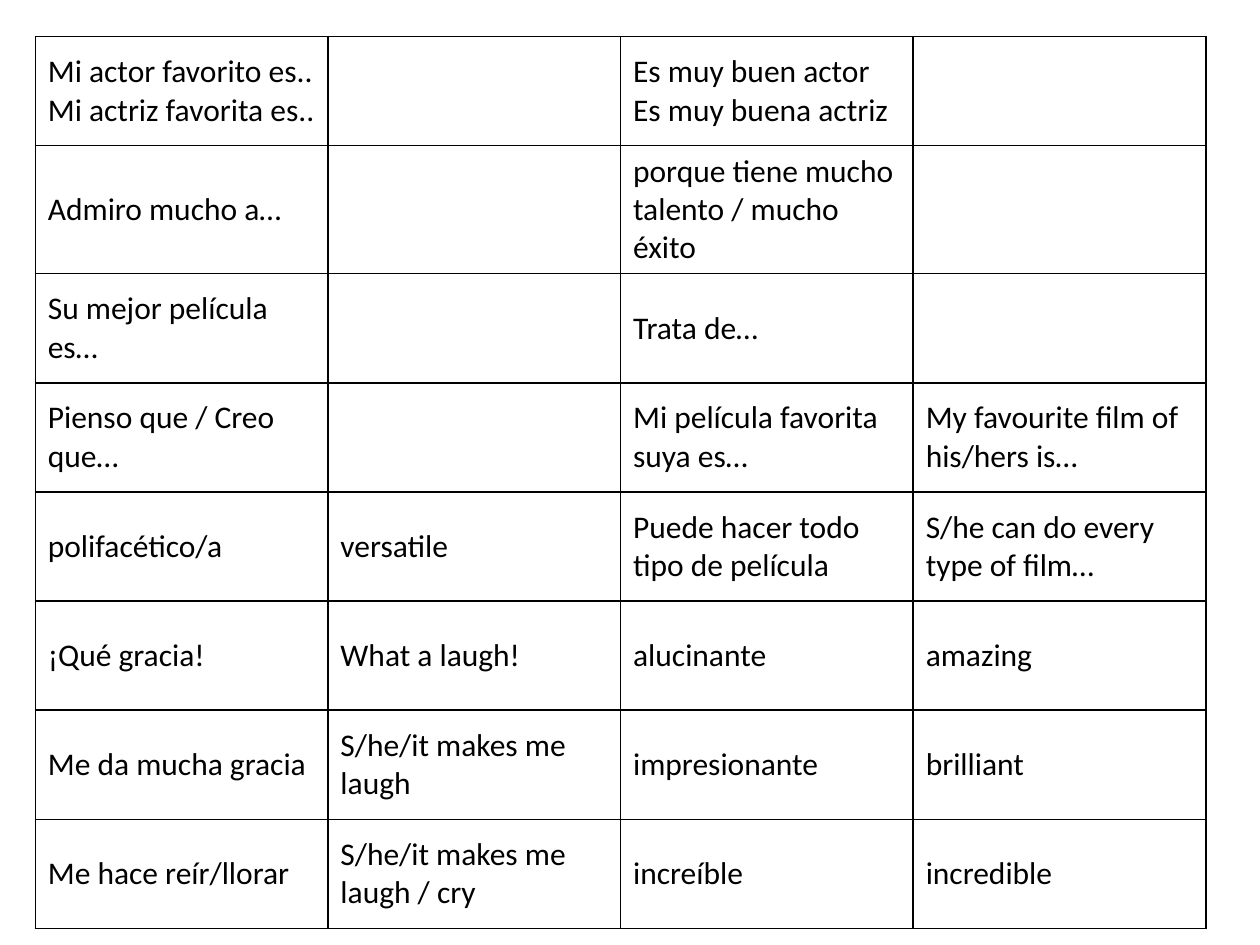
from pptx import Presentation
from pptx.dml.color import RGBColor
from pptx.enum.text import MSO_ANCHOR
from pptx.oxml.ns import qn
from pptx.util import Inches, Pt
from lxml.etree import SubElement

COLORS = {"ink": "000000", "paper": "FFFFFF"}
FONT = "Calibri"
WIDTH, HEIGHT = 10, 7.5

PHRASES = [
    ["Mi actor favorito es..\nMi actriz favorita es..", "",
     "Es muy buen actor\nEs muy buena actriz", ""],
    ["Admiro mucho a…", "", "porque tiene mucho talento / mucho éxito", ""],
    ["Su mejor película es…", "", "Trata de…", ""],
    ["Pienso que / Creo que…", "",
     "Mi película favorita suya es…", "My favourite film of his/hers is…"],
    ["polifacético/a", "versatile",
     "Puede hacer todo tipo de película", "S/he can do every type of film…"],
    ["¡Qué gracia!", "What a laugh!", "alucinante", "amazing"],
    ["Me da mucha gracia", "S/he/it makes me laugh", "impresionante", "brilliant"],
    ["Me hace reír/llorar", "S/he/it makes me laugh / cry", "increíble", "incredible"],
]


def write_text(tf, text, *, size=18, font=FONT, color="ink"):
    """Write one paragraph; a newline becomes a line break."""
    p = tf.paragraphs[0]
    p.text = text
    p.font.size = Pt(size)
    for r in p.runs:
        r.font.size = Pt(size)
        r.font.name = font
        r.font.color.rgb = RGBColor.from_string(COLORS[color])


def set_borders(cell, *, width=1, color="ink"):
    props = cell._tc.get_or_add_tcPr()
    for side in ("lnL", "lnR", "lnT", "lnB"):
        line = SubElement(props, qn(f"a:{side}"), w=str(Pt(width)))
        fill = SubElement(line, qn("a:solidFill"))
        SubElement(fill, qn("a:srgbClr"), val=COLORS[color])


def add_phrase_table(s, rows, left, top, width, height):
    """Fill the given box with equal columns and rows of phrases."""
    n_rows, n_cols = len(rows), len(rows[0])
    box = [Inches(v) for v in (left, top, width, height)]
    table = s.shapes.add_table(n_rows, n_cols, *box).table
    table.first_row = table.horz_banding = False
    for col in table.columns:
        col.width = Inches(width / n_cols)
    for row, phrases in zip(table.rows, rows):
        row.height = Inches(height / n_rows)
        for cell, phrase in zip(row.cells, phrases):
            set_borders(cell)
            cell.fill.solid()
            cell.fill.fore_color.rgb = RGBColor.from_string(COLORS["paper"])
            cell.vertical_anchor = MSO_ANCHOR.MIDDLE
            write_text(cell.text_frame, phrase)


def main():
    prs = Presentation()
    prs.slide_width, prs.slide_height = Inches(WIDTH), Inches(HEIGHT)
    s = prs.slides.add_slide(prs.slide_layouts[6])
    add_phrase_table(s, PHRASES, left=0.28, top=0.29, width=9.29, height=6.93)
    prs.save("out.pptx")


if __name__ == "__main__":
    main()
